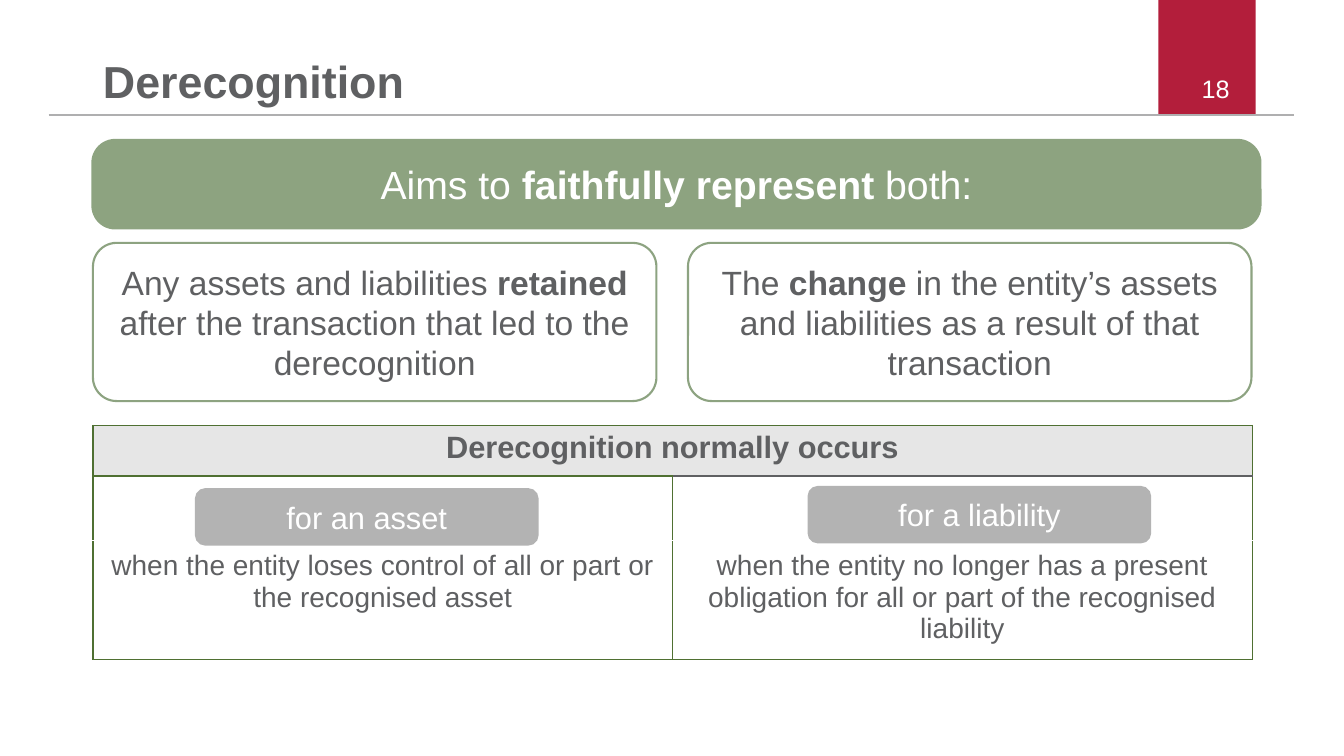
from dataclasses import dataclass

from lxml.etree import SubElement
from pptx import Presentation
from pptx.dml.color import RGBColor
from pptx.enum.shapes import MSO_CONNECTOR, MSO_SHAPE
from pptx.enum.text import MSO_ANCHOR, PP_ALIGN
from pptx.oxml.ns import qn
from pptx.shapes.autoshape import Shape
from pptx.slide import Slide
from pptx.table import _Cell
from pptx.text.text import TextFrame, _Paragraph
from pptx.util import Pt

FONT = "Arial"
WHITE, TEXT_GREY = "FFFFFF", "5F6062"
CRIMSON, RULE_GREY = "B31E3B", "AFAFB0"
SAGE, OUTLINE_SAGE = "8DA380", "8DA381"
BUTTON_GREY, HEADER_GREY, BORDER_GREEN = "B3B3B3", "E6E6E6", "4F7032"


@dataclass
class Panel:
    """A rounded box; every second phrase of its text is bold."""
    left: float
    top: float
    width: float
    height: float
    phrases: list[str]
    size: float
    text_color: str
    line_color: str
    line_width: float
    fill_color: str | None = None
    rounding: float = 0.17


@dataclass
class TableCell:
    row: int
    column: int
    text: str = ""
    size: float = 20
    bold: bool = False
    top_color: str = BORDER_GREEN
    bottom_color: str = BORDER_GREEN
    fill_color: str | None = None
    top_margin: float = 3.6


def rgb(value: str) -> RGBColor:
    return RGBColor.from_string(value)


def format_runs(paragraph: _Paragraph, size: float, color: str, bold: bool = False) -> None:
    for run in paragraph.runs:
        run.font.name = FONT
        run.font.size = Pt(size)
        run.font.bold = bold
        run.font.color.rgb = rgb(color)


def write(frame: TextFrame, text: str, size: float, color: str,
          bold: bool = False, alignment: PP_ALIGN = PP_ALIGN.CENTER) -> None:
    frame.word_wrap = True
    frame.text = text
    paragraph = frame.paragraphs[0]
    paragraph.alignment = alignment
    format_runs(paragraph, size, color, bold)


def add_title(slide: Slide, text: str) -> None:
    title = slide.shapes.title
    title.left, title.top, title.width, title.height = Pt(73.5), Pt(0), Pt(711.5), Pt(77)
    frame = title.text_frame
    write(frame, text, 32, TEXT_GREY, True, PP_ALIGN.LEFT)
    frame.vertical_anchor = MSO_ANCHOR.BOTTOM
    frame.margin_left = frame.margin_top = frame.margin_right = frame.margin_bottom = 0
    frame.paragraphs[0].line_spacing = 0.9


def add_page_marker(slide: Slide, number: str) -> None:
    marker = slide.shapes.add_shape(MSO_SHAPE.RECTANGLE, Pt(827.5), Pt(0), Pt(69.5), Pt(82))
    marker.shadow.inherit = False
    marker.fill.solid()
    marker.fill.fore_color.rgb = rgb(CRIMSON)
    marker.line.fill.background()

    rule = slide.shapes.add_connector(MSO_CONNECTOR.STRAIGHT, Pt(34.8), Pt(82), Pt(924.5), Pt(82))
    rule.line.color.rgb = rgb(RULE_GREY)
    rule.line.width = Pt(1.2)
    SubElement(rule._element.spPr, qn("a:effectLst"))

    label = slide.shapes.add_textbox(Pt(661.5), Pt(48.5), Pt(224), Pt(29))
    write(label.text_frame, number, 18, WHITE, alignment=PP_ALIGN.RIGHT)
    label.text_frame.vertical_anchor = MSO_ANCHOR.MIDDLE


def add_panel(slide: Slide, panel: Panel) -> Shape:
    shape = slide.shapes.add_shape(
        MSO_SHAPE.ROUNDED_RECTANGLE,
        Pt(panel.left), Pt(panel.top), Pt(panel.width), Pt(panel.height))
    shape.shadow.inherit = False
    shape.adjustments[0] = panel.rounding
    if panel.fill_color:
        shape.fill.solid()
        shape.fill.fore_color.rgb = rgb(panel.fill_color)
    else:
        shape.fill.background()
    shape.line.color.rgb = rgb(panel.line_color)
    shape.line.width = Pt(panel.line_width)
    frame = shape.text_frame
    frame.word_wrap = True
    frame.vertical_anchor = MSO_ANCHOR.MIDDLE
    paragraph = frame.paragraphs[0]
    paragraph.alignment = PP_ALIGN.CENTER
    for phrase in panel.phrases:
        paragraph.add_run().text = phrase
    format_runs(paragraph, panel.size, panel.text_color)
    for run in paragraph.runs[1::2]:
        run.font.bold = True
    return shape


def set_borders(cell: _Cell, top_color: str, bottom_color: str) -> None:
    properties = cell._tc.get_or_add_tcPr()
    sides = {"a:lnL": BORDER_GREEN, "a:lnR": BORDER_GREEN,
             "a:lnT": top_color, "a:lnB": bottom_color}
    for tag, color in sides.items():
        line = SubElement(properties, qn(tag), w=str(Pt(1)))
        fill = SubElement(line, qn("a:solidFill"))
        SubElement(fill, qn("a:srgbClr"), val=color)


def add_occurrence_table(slide: Slide, cells: list[TableCell]) -> None:
    row_heights = [36, 46, 85]
    table = slide.shapes.add_table(
        3, 2, Pt(66.4), Pt(304), Pt(828), Pt(sum(row_heights))).table
    for row, height in zip(table.rows, row_heights):
        row.height = Pt(height)
    table.cell(0, 0).merge(table.cell(0, 1))
    for content in cells:
        cell = table.cell(content.row, content.column)
        set_borders(cell, content.top_color, content.bottom_color)
        if content.fill_color:
            cell.fill.solid()
            cell.fill.fore_color.rgb = rgb(content.fill_color)
        else:
            cell.fill.background()
        cell.margin_top = Pt(content.top_margin)
        if content.text:
            write(cell.text_frame, content.text, content.size, TEXT_GREY, content.bold)


def main() -> None:
    presentation = Presentation()
    presentation.slide_width, presentation.slide_height = Pt(960), Pt(540)
    slide = presentation.slides.add_slide(presentation.slide_layouts[5])

    add_page_marker(slide, "18")
    add_title(slide, "Derecognition")
    add_panel(slide, Panel(66.4, 100.3, 833.6, 62.5,
                           ["Aims to ", "faithfully represent ", "both:"],
                           28, WHITE, SAGE, 2.25, SAGE, 0.255))

    reasons = ["when the entity loses control of all or part or the recognised asset",
               "when the entity no longer has a present obligation for all or part of "
               "the recognised liability"]
    cells = [TableCell(0, column, text, 22, True, fill_color=HEADER_GREY)
             for column, text in enumerate(["Derecognition normally occurs", ""])]
    cells += [TableCell(1, column, top_color=color, bottom_color=WHITE)
              for column, color in enumerate([BORDER_GREEN, TEXT_GREY])]
    cells += [TableCell(2, column, text, top_color=WHITE, top_margin=7.2)
              for column, text in enumerate(reasons)]
    add_occurrence_table(slide, cells)

    for left, top, text in [(140, 349.4, "for an asset"), (577.6, 347.8, "for a liability")]:
        add_panel(slide, Panel(left, top, 244, 39.6, [text], 22, WHITE,
                               BUTTON_GREY, 1.5, BUTTON_GREY))

    aims = [["Any assets and liabilities ", "retained",
             " after the transaction that led to the derecognition"],
            ["The ", "change",
             " in the entity’s assets and liabilities as a result of that transaction"]]
    for column, phrases in enumerate(aims):
        add_panel(slide, Panel(66.4 + column * 425, 173.5, 402.5, 113, phrases, 24,
                               TEXT_GREY, OUTLINE_SAGE, 1.5, rounding=0.15))

    presentation.save("out.pptx")


if __name__ == "__main__":
    main()
